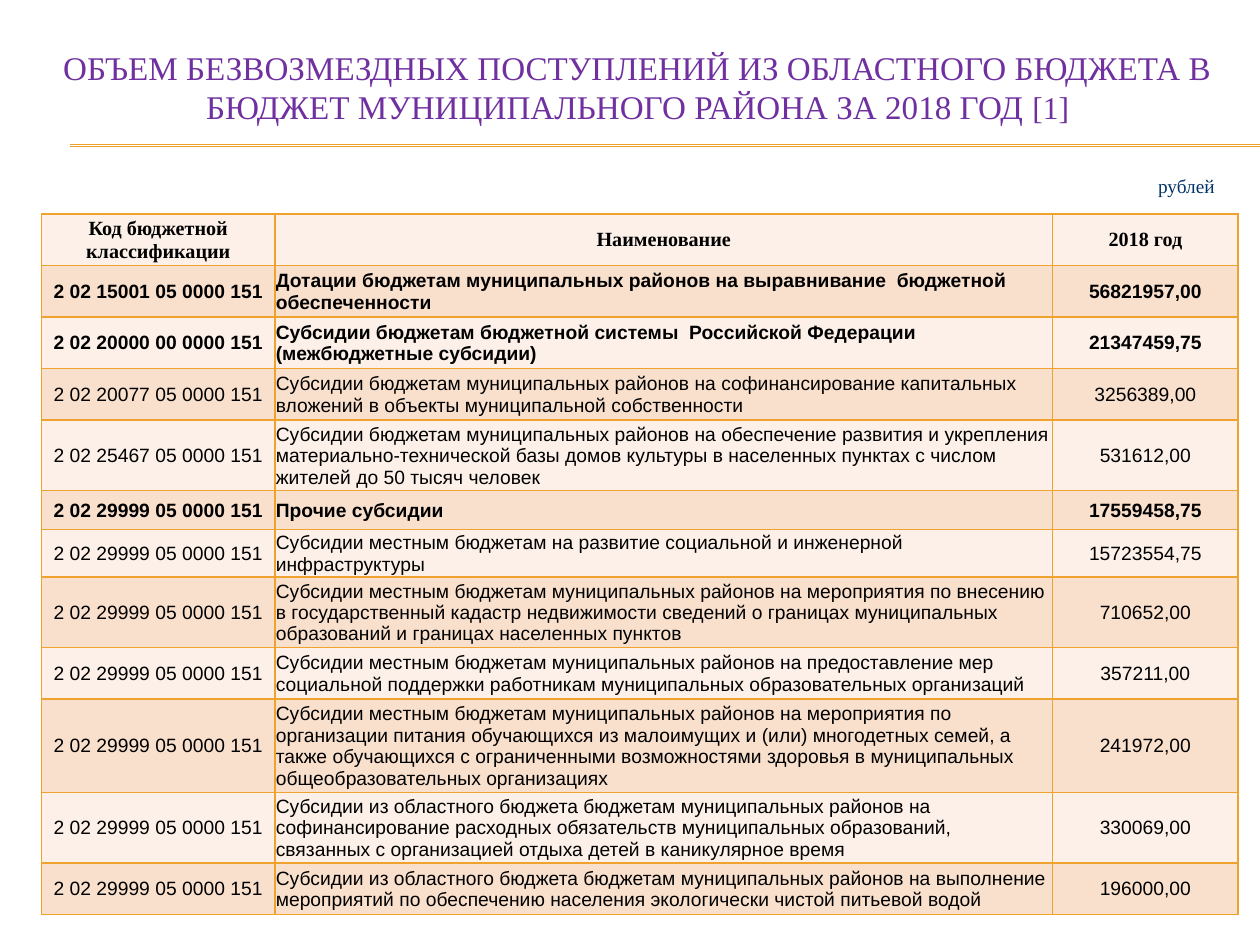
import pptx
import pptx.util
import pptx.dml.color
import pptx.enum.shapes
import pptx.enum.text
import pptx.oxml
import pptx.oxml.ns

Cm = pptx.util.Cm
Pt = pptx.util.Pt
RGBColor = pptx.dml.color.RGBColor
ALIGN = pptx.enum.text.PP_ALIGN
ANCHOR = pptx.enum.text.MSO_ANCHOR

PURPLE = RGBColor(0x70, 0x30, 0xA0)
NAVY = RGBColor(0x00, 0x33, 0x66)
BLACK = RGBColor(0x00, 0x00, 0x00)
ORANGE = RGBColor(0xF0, 0xA2, 0x2E)
LIGHT = RGBColor(0xFC, 0xF0, 0xE8)
PEACH = RGBColor(0xF9, 0xE0, 0xCD)

SERIF = "Times New Roman"
SANS = "Arial"

COLUMN_WIDTHS = [4.7, 15.68, 3.74]
ROW_HEIGHT = 1.04
SHORT_ROWS = {5: 0.79, 6: 0.56}
HEADER = ("Код бюджетной классификации", "Наименование", "2018 год")
OTHER_CODE = "2 02 29999 05 0000 151"
BOLD_ROWS = {0, 1, 2, 5}
ROWS = [
    ("2 02 15001 05 0000 151",
     "Дотации бюджетам муниципальных районов на выравнивание  бюджетной обеспеченности",
     "56821957,00"),
    ("2 02 20000 00 0000 151",
     "Субсидии бюджетам бюджетной системы  Российской Федерации (межбюджетные субсидии)",
     "21347459,75"),
    ("2 02 20077 05 0000 151",
     "Субсидии бюджетам муниципальных районов на софинансирование капитальных "
     "вложений в объекты муниципальной собственности",
     "3256389,00"),
    ("2 02 25467 05 0000 151",
     "Субсидии бюджетам муниципальных районов на обеспечение развития и укрепления "
     "материально-технической базы домов культуры в населенных пунктах с числом "
     "жителей до 50 тысяч человек",
     "531612,00"),
    (OTHER_CODE, "Прочие субсидии", "17559458,75"),
    (OTHER_CODE,
     "Субсидии местным бюджетам на развитие социальной и инженерной инфраструктуры",
     "15723554,75"),
    (OTHER_CODE,
     "Субсидии местным бюджетам муниципальных районов на мероприятия по внесению "
     "в государственный кадастр недвижимости сведений о границах муниципальных "
     "образований и границах населенных пунктов",
     "710652,00"),
    (OTHER_CODE,
     "Субсидии местным бюджетам муниципальных районов на предоставление мер "
     "социальной поддержки работникам муниципальных образовательных организаций",
     "357211,00"),
    (OTHER_CODE,
     "Субсидии местным бюджетам муниципальных районов на мероприятия по "
     "организации питания обучающихся из малоимущих и (или) многодетных семей, а "
     "также обучающихся с ограниченными возможностями здоровья в муниципальных "
     "общеобразовательных организациях",
     "241972,00"),
    (OTHER_CODE,
     "Субсидии из областного бюджета бюджетам муниципальных районов на "
     "софинансирование расходных обязательств муниципальных образований, "
     "связанных с организацией отдыха детей в каникулярное время",
     "330069,00"),
    (OTHER_CODE,
     "Субсидии из областного бюджета бюджетам муниципальных районов на выполнение "
     "мероприятий по обеспечению населения экологически чистой питьевой водой",
     "196000,00"),
]


def add_rule(slide, top):
    line = slide.shapes.add_connector(
        pptx.enum.shapes.MSO_CONNECTOR.STRAIGHT, Cm(1.42), Cm(top), Cm(25.4), Cm(top))
    line.line.color.rgb = ORANGE
    line.line.width = Pt(0.75)
    pptx.oxml.ns.qn("a:effectLst")
    line._element.spPr.append(pptx.oxml.parse_xml(
        f'<a:effectLst {pptx.oxml.ns.nsdecls("a")}/>'))


def add_text(slide, box, runs, color, align, wrap):
    """Add one paragraph made of (text, size) runs."""
    shape = slide.shapes.add_textbox(*(Cm(length) for length in box))
    frame = shape.text_frame
    frame.word_wrap = wrap
    frame.vertical_anchor = ANCHOR.MIDDLE
    paragraph = frame.paragraphs[0]
    paragraph.alignment = align
    paragraph.font.name = SERIF
    paragraph.font.color.rgb = color
    for text, size in runs:
        run = paragraph.add_run()
        run.text = text
        run.font.size = Pt(size)


def set_borders(cell):
    properties = cell._tc.get_or_add_tcPr()
    for index, side in enumerate(("lnL", "lnR", "lnT", "lnB")):
        properties.insert(index, pptx.oxml.parse_xml(
            f'<a:{side} {pptx.oxml.ns.nsdecls("a")} w="{Pt(1)}"><a:solidFill>'
            f'<a:srgbClr val="{ORANGE}"/></a:solidFill></a:{side}>'))


def fill_cell(cell, text, color, align, font_name, size, bold):
    cell.text = text
    cell.vertical_anchor = ANCHOR.MIDDLE
    cell.margin_left = cell.margin_right = cell.margin_top = Cm(0.02)
    cell.margin_bottom = 0
    cell.fill.solid()
    cell.fill.fore_color.rgb = color
    set_borders(cell)
    paragraph = cell.text_frame.paragraphs[0]
    paragraph.alignment = align
    paragraph.font.name = font_name
    paragraph.font.size = Pt(size)
    paragraph.font.bold = bold
    paragraph.font.color.rgb = BLACK


def add_budget_table(slide):
    records = [HEADER] + ROWS
    heights = [SHORT_ROWS.get(index, ROW_HEIGHT) for index in range(len(records))]
    table = slide.shapes.add_table(
        len(records), len(HEADER), Cm(0.84), Cm(4.31),
        Cm(sum(COLUMN_WIDTHS)), Cm(sum(heights))).table
    for column, width in zip(table.columns, COLUMN_WIDTHS):
        column.width = Cm(width)
    for row_index, record in enumerate(records):
        table.rows[row_index].height = Cm(heights[row_index])
        is_header = row_index == 0
        font_name, size = (SERIF, 11.5) if is_header else (SANS, 11)
        color = PEACH if row_index % 2 else LIGHT
        for column_index, text in enumerate(record):
            is_name = column_index == 1 and not is_header
            fill_cell(table.cell(row_index, column_index), text, color,
                      ALIGN.LEFT if is_name else ALIGN.CENTER,
                      font_name, size, row_index in BOLD_ROWS)


def main():
    presentation = pptx.Presentation()
    presentation.slide_width = Cm(25.4)
    presentation.slide_height = Cm(19.05)
    slide = presentation.slides.add_slide(presentation.slide_layouts[6])

    # Double rule under the title
    for top in (2.92, 2.95):
        add_rule(slide, top)

    # Title
    add_text(slide, (0.79, 0.58, 24.13, 2.34),
             [("ОБЪЕМ БЕЗВОЗМЕЗДНЫХ ПОСТУПЛЕНИЙ ИЗ ОБЛАСТНОГО БЮДЖЕТА В "
               "БЮДЖЕТ МУНИЦИПАЛЬНОГО РАЙОНА ЗА 2018 ГОД ", 18.9), ("[1]", 18)],
             PURPLE, ALIGN.CENTER, True)

    # Table and its unit label
    add_budget_table(slide)
    add_text(slide, (23.06, 3.38, 1.68, 0.74), [("рублей", 11)],
             NAVY, ALIGN.RIGHT, False)

    presentation.save("out.pptx")


if __name__ == "__main__":
    main()
